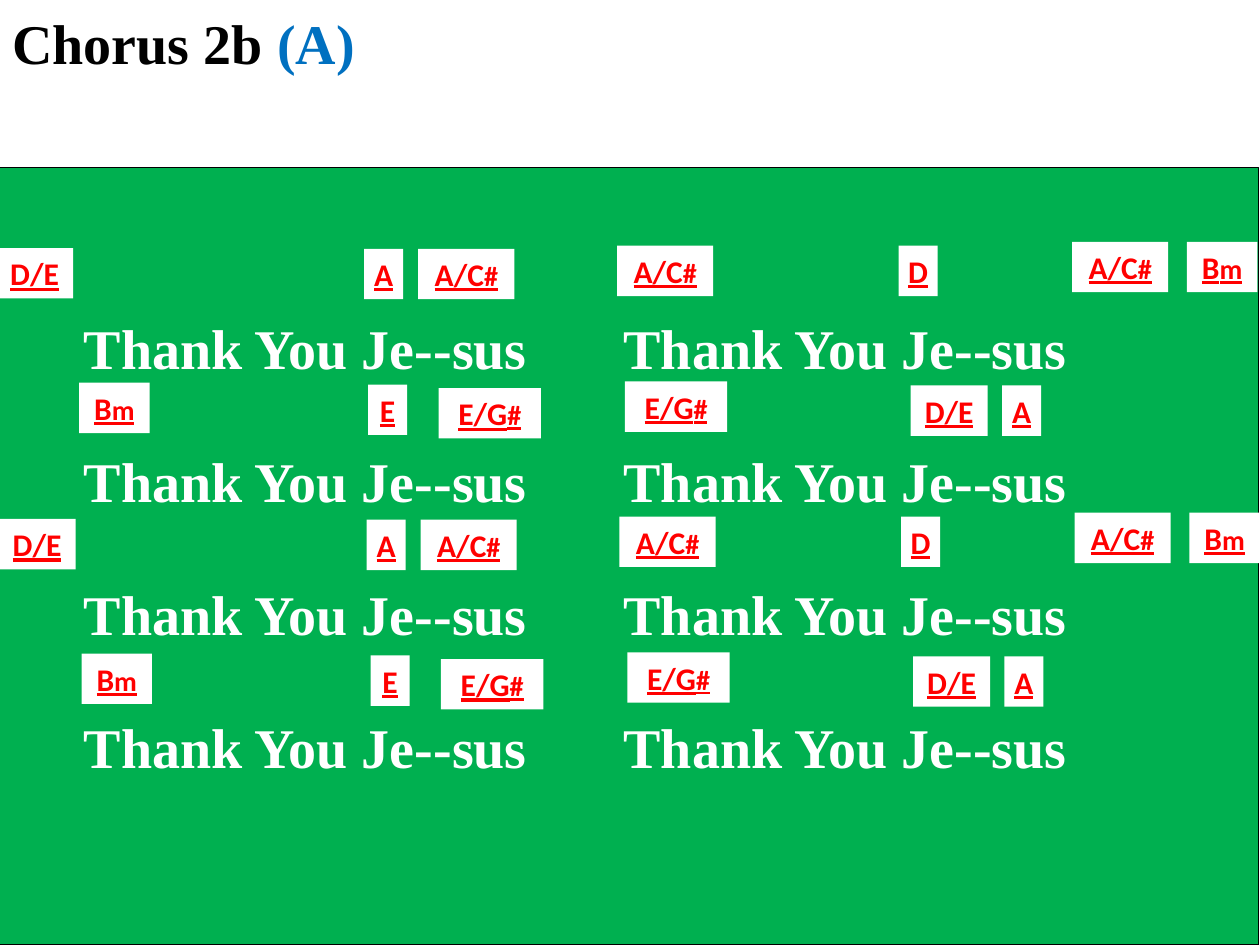
from pptx import Presentation
from pptx.dml.color import RGBColor
from pptx.enum.shapes import MSO_SHAPE
from pptx.enum.text import MSO_ANCHOR, PP_ALIGN
from pptx.oxml import parse_xml
from pptx.oxml.ns import nsdecls
from pptx.util import Pt

RECTANGLE = MSO_SHAPE.RECTANGLE
TOP = MSO_ANCHOR.TOP
LEFT, CENTER = PP_ALIGN.LEFT, PP_ALIGN.CENTER

BLACK = RGBColor(0x00, 0x00, 0x00)
WHITE = RGBColor(0xFF, 0xFF, 0xFF)
GREEN = RGBColor(0x00, 0xB0, 0x50)
BLUE = RGBColor(0x00, 0x70, 0xC0)
RED = RGBColor(0xFF, 0x00, 0x00)

TITLE = [("Chorus 2b", BLACK), (" (A)", BLUE)]
PHRASE = "Thank You Je--sus"
LYRIC_LINES = 4

# Chord name, left and top in the first half of the chorus
CHORDS = [
    ("D/E", -2.2, 141.8), ("A", 208.1, 142.2), ("A/C#", 239, 142.2),
    ("A/C#", 352.6, 140.4), ("D", 513.5, 140.4),
    ("A/C#", 612.6, 138.2), ("Bm", 678.2, 138.2),
    ("Bm", 45.2, 218.7), ("E", 210.4, 219.8), ("E/G#", 250.6, 221.8),
    ("E/G#", 357.1, 218), ("D/E", 520.4, 220.3), ("A", 572.6, 220.3),
]
CHORD_WIDTHS = {"A": 22.3, "D": 22.3, "E": 22.3, "Bm": 40.3,
                "D/E": 44, "A/C#": 54.9, "E/G#": 58.5}
CHORD_HEIGHT = 28.8
HALVES = [(0, 0), (1.4, 154.8)]

LYRIC_FONT = {"name": "Times New Roman", "size": Pt(32), "bold": True}
CHORD_FONT = {"name": "Calibri", "size": Pt(18), "bold": True, "underline": True}
SMALL_SUFFIX = {**CHORD_FONT, "size": Pt(16)}
SECOND_PHRASE = Pt(308.5)


def add_rectangle(slide, left, top, width, height, fill):
    shape = slide.shapes.add_shape(RECTANGLE, Pt(left), Pt(top), Pt(width), Pt(height))
    shape.shadow.inherit = False
    shape.fill.solid()
    shape.fill.fore_color.rgb = fill
    shape.line.fill.background()
    return shape


def add_run(paragraph, text, color, font_format):
    run = paragraph.add_run()
    run.text = text
    run.font.color.rgb = color
    for name, value in font_format.items():
        setattr(run.font, name, value)


def start_label(shape, alignment):
    """Set up an unwrapped one-line text and return its paragraph."""
    frame = shape.text_frame
    frame.word_wrap = False
    frame.vertical_anchor = TOP
    frame.paragraphs[0].alignment = alignment
    return frame.paragraphs[0]


def add_lyrics(slide):
    frame = slide.shapes.add_textbox(Pt(0.7), Pt(156.2), Pt(719.3), Pt(298)).text_frame
    frame.word_wrap = True
    frame.margin_left = Pt(47.2)
    for index in range(LYRIC_LINES):
        paragraph = frame.paragraphs[0] if index == 0 else frame.add_paragraph()
        paragraph.line_spacing = 1.5
        paragraph.space_before = Pt(18.4)
        tabs = f'<a:tabLst {nsdecls("a")}><a:tab pos="{SECOND_PHRASE}" algn="l"/></a:tabLst>'
        paragraph._p.get_or_add_pPr().append(parse_xml(tabs))
        add_run(paragraph, f"{PHRASE}\t{PHRASE}", WHITE, LYRIC_FONT)


def add_chord(slide, chord, left, top):
    shape = add_rectangle(slide, left, top, CHORD_WIDTHS[chord], CHORD_HEIGHT, WHITE)
    paragraph = start_label(shape, CENTER)
    root = chord.rstrip("#m")
    add_run(paragraph, root, RED, CHORD_FONT)
    if root != chord:
        add_run(paragraph, chord[len(root):], RED, SMALL_SUFFIX)


def main():
    presentation = Presentation()
    presentation.slide_width, presentation.slide_height = Pt(720), Pt(540)
    slide = presentation.slides.add_slide(presentation.slide_layouts[6])

    panel = add_rectangle(slide, -2.2, 95.8, 721.5, 444.2, GREEN)
    panel.line.color.rgb = BLACK
    panel.line.width = Pt(0.75)
    add_lyrics(slide)

    title = start_label(add_rectangle(slide, 0, 1.4, 239.8, 46.1, WHITE), LEFT)
    for text, color in TITLE:
        add_run(title, text, color, LYRIC_FONT)

    for shift_x, shift_y in HALVES:
        for chord, left, top in CHORDS:
            add_chord(slide, chord, left + shift_x, top + shift_y)

    presentation.save("out.pptx")


if __name__ == "__main__":
    main()
